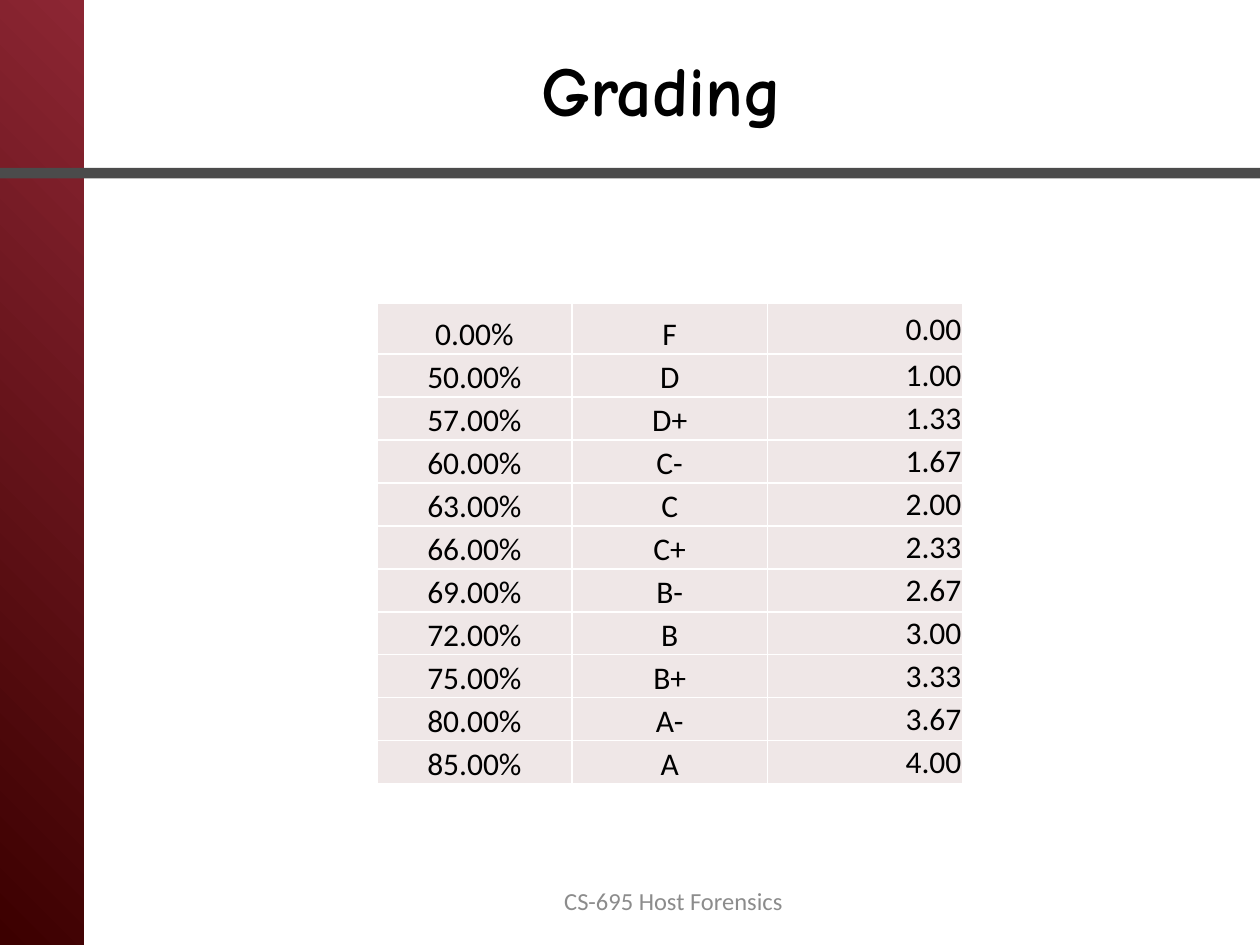
from lxml import etree
from pptx import Presentation
from pptx.dml.color import RGBColor
from pptx.enum.shapes import MSO_SHAPE
from pptx.enum.text import MSO_ANCHOR, PP_ALIGN
from pptx.oxml.ns import qn
from pptx.util import Pt

RECT = MSO_SHAPE.RECTANGLE
MIDDLE, BOTTOM = MSO_ANCHOR.MIDDLE, MSO_ANCHOR.BOTTOM
CENTER, RIGHT = PP_ALIGN.CENTER, PP_ALIGN.RIGHT

BLACK = RGBColor(0x00, 0x00, 0x00)
WHITE = RGBColor(0xFF, 0xFF, 0xFF)
DARK_RED = RGBColor(0x3C, 0x00, 0x00)
RED = RGBColor(0x8C, 0x26, 0x33)
BAR_GRAY = RGBColor(0x4B, 0x4B, 0x4B)
FOOTER_GRAY = RGBColor(0x8C, 0x8C, 0x8C)
CELL_PINK = RGBColor(0xEF, 0xE7, 0xE7)

TITLE_FONT = {"name": "Comic Neue", "size": Pt(40), "bold": True}
FOOTER_FONT = {"name": "Calibri", "size": Pt(14)}
CELL_FONT = {"name": "Calibri", "size": Pt(18)}

GRADES = [
    ("0.00%", "F", "0.00"),
    ("50.00%", "D", "1.00"),
    ("57.00%", "D+", "1.33"),
    ("60.00%", "C-", "1.67"),
    ("63.00%", "C", "2.00"),
    ("66.00%", "C+", "2.33"),
    ("69.00%", "B-", "2.67"),
    ("72.00%", "B", "3.00"),
    ("75.00%", "B+", "3.33"),
    ("80.00%", "A-", "3.67"),
    ("85.00%", "A", "4.00"),
]
COLUMN_LAYOUT = [(CENTER, BOTTOM), (CENTER, BOTTOM), (RIGHT, MIDDLE)]
COLUMN_WIDTH, FIRST_ROW_HEIGHT, ROW_HEIGHT = Pt(111.6), Pt(28.8), Pt(24.55)


def write(tf, text, font, color, align):
    p = tf.paragraphs[0]
    p.alignment = align
    r = p.add_run()
    r.text = text
    for name, value in font.items():
        setattr(r.font, name, value)
    r.font.color.rgb = color


def add_rect(s, left, top, width, height):
    sp = s.shapes.add_shape(RECT, Pt(left), Pt(top), Pt(width), Pt(height))
    sp.shadow.inherit = False
    sp.line.fill.background()
    return sp


def add_background(s):
    fill = add_rect(s, 0, 0, 48, 540).fill
    fill.gradient()
    fill.gradient_angle = 45
    for stop, color in zip(fill.gradient_stops, (DARK_RED, RED)):
        stop.color.rgb = color
    fill = add_rect(s, 0, 96, 720, 6).fill
    fill.solid()
    fill.fore_color.rgb = BAR_GRAY


def set_title(s, text):
    title = s.shapes.title
    title.left, title.top, title.width, title.height = Pt(72), Pt(10.8), Pt(612), Pt(79.2)
    title.text_frame.vertical_anchor = MIDDLE
    write(title.text_frame, text, TITLE_FONT, BLACK, CENTER)


def add_footer(s, text):
    tf = s.shapes.add_textbox(Pt(295.2), Pt(500.4), Pt(179.3), Pt(28.8)).text_frame
    tf.word_wrap = True
    tf.vertical_anchor = MIDDLE
    write(tf, text, FOOTER_FONT, FOOTER_GRAY, CENTER)


def set_borders(cell, color, width):
    tc_pr = cell._tc.get_or_add_tcPr()
    for i, side in enumerate(("a:lnL", "a:lnR", "a:lnT", "a:lnB")):
        ln = etree.Element(qn(side), w=str(width))
        fill = etree.SubElement(ln, qn("a:solidFill"))
        etree.SubElement(fill, qn("a:srgbClr"), val=str(color))
        tc_pr.insert(i, ln)


def format_cell(cell, text, align, anchor):
    cell.margin_left = cell.margin_right = cell.margin_top = Pt(0.75)
    cell.margin_bottom = 0
    cell.vertical_anchor = anchor
    cell.fill.solid()
    cell.fill.fore_color.rgb = CELL_PINK
    set_borders(cell, WHITE, Pt(1))
    write(cell.text_frame, text, CELL_FONT, BLACK, align)


def add_grade_table(s):
    rows, cols = len(GRADES), len(COLUMN_LAYOUT)
    height = FIRST_ROW_HEIGHT + ROW_HEIGHT * (rows - 1)
    table = s.shapes.add_table(rows, cols, Pt(215.3), Pt(173.5), COLUMN_WIDTH * cols, height).table
    table.first_row = table.horz_banding = False
    for column in table.columns:
        column.width = COLUMN_WIDTH
    for i, grade in enumerate(GRADES):
        table.rows[i].height = ROW_HEIGHT if i else FIRST_ROW_HEIGHT
        for j, (text, layout) in enumerate(zip(grade, COLUMN_LAYOUT)):
            format_cell(table.cell(i, j), text, *layout)


def main():
    prs = Presentation()
    prs.slide_width, prs.slide_height = Pt(720), Pt(540)
    s = prs.slides.add_slide(prs.slide_layouts[5])
    add_background(s)
    set_title(s, "Grading")
    add_footer(s, "CS-695 Host Forensics")
    add_grade_table(s)
    prs.save("out.pptx")


if __name__ == "__main__":
    main()
